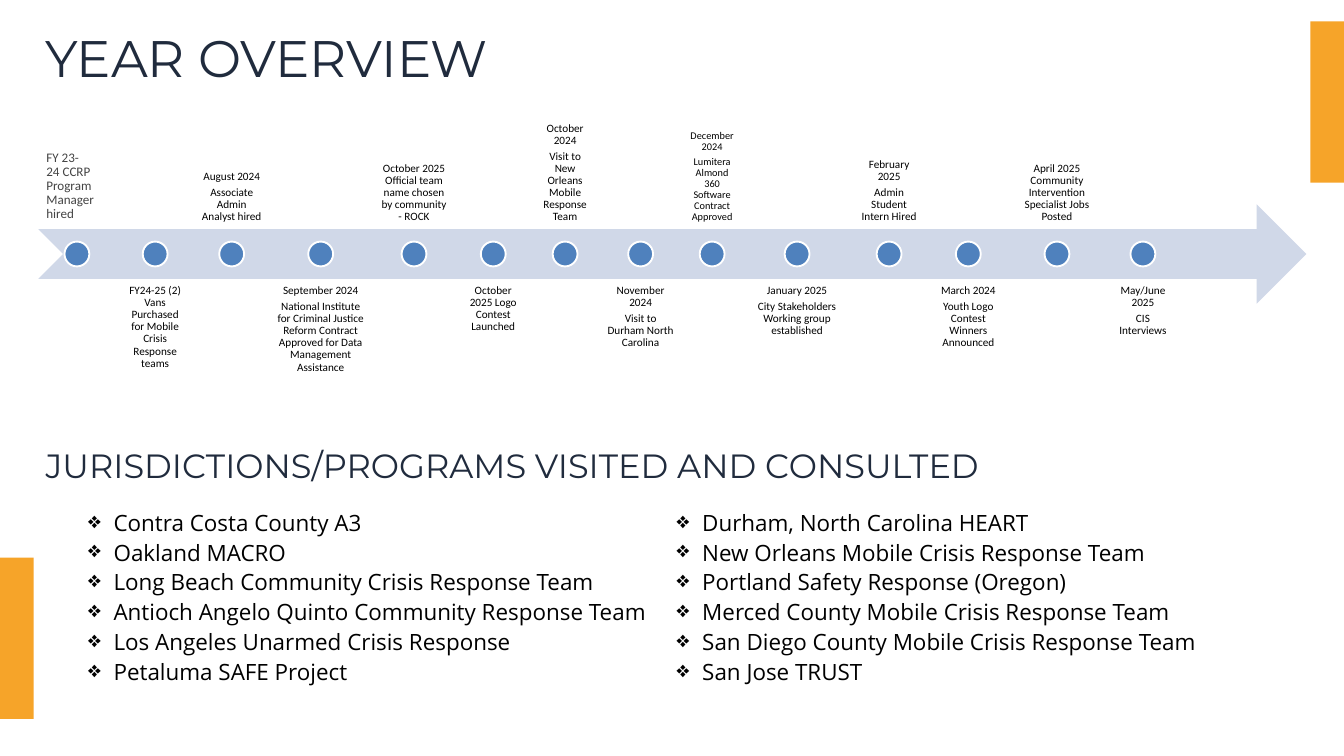
from lxml import etree
from pptx import Presentation
from pptx.dml.color import RGBColor
from pptx.enum import shapes, text
from pptx.oxml import ns
from pptx.util import Inches, Pt

COLORS = {
    "heading": "202B3D",
    "body": "000000",
    "first_event": "444444",
    "arrow": "D0D8E8",
    "dot": "4F81BD",
    "dot_edge": "FFFFFF",
    "accent": "F6A429",
}

EVENTS = [
    (1.13, ["FY 23-24\u00a0CCRP Program Manager hired"]),
    (1.11, ["FY24-25 (2) Vans Purchased for Mobile Crisis Response teams"]),
    (1.08, ["August 2024", "Associate Admin Analyst hired"]),
    (1.48, ["September 2024", "National Institute for Criminal Justice Reform "
            "Contract Approved for Data Management Assistance"]),
    (1.21, ["October 2025 Official team name chosen by community - ROCK"]),
    (1.06, ["October 2025 Logo Contest Launched"]),
    (0.99, ["October 2024", "Visit to New Orleans Mobile Response Team"]),
    (1.17, ["November 2024", "Visit to Durham North Carolina"]),
    (0.87, ["December 2024", "Lumitera Almond 360 Software Contract Approved"]),
    (1.57, ["January 2025", "City Stakeholders Working group established"]),
    (1.08, ["February 2025", "Admin Student Intern Hired"]),
    (1.19, ["March 2024", "Youth Logo Contest Winners Announced"]),
    (1.36, ["April 2025 Community Intervention Specialist Jobs Posted"]),
    (1.11, ["May/June 2025", "CIS Interviews"]),
]

PROGRAMS_LEFT = [
    "Contra Costa County A3",
    "Oakland MACRO",
    "Long Beach Community Crisis Response Team",
    "Antioch Angelo Quinto Community Response Team",
    "Los Angeles Unarmed Crisis Response",
    "Petaluma SAFE Project",
]
PROGRAMS_RIGHT = [
    "Durham, North Carolina HEART",
    "New Orleans Mobile Crisis Response Team",
    "Portland Safety Response (Oregon)",
    "Merced County Mobile Crisis Response Team",
    "San Diego County Mobile Crisis Response Team",
    "San Jose TRUST",
]


def rgb(name):
    return RGBColor.from_string(COLORS[name])


def add_block(slide, box, lines, font, size, color, spacing, after=0, inset=0,
              align=text.PP_ALIGN.LEFT, anchor=text.MSO_ANCHOR.TOP, grow=False):
    frame = slide.shapes.add_textbox(*map(Inches, box)).text_frame
    frame.word_wrap = True
    frame.auto_size = (text.MSO_AUTO_SIZE.SHAPE_TO_FIT_TEXT if grow
                       else text.MSO_AUTO_SIZE.NONE)
    frame.vertical_anchor = anchor
    frame.margin_left = frame.margin_right = Inches(inset)
    frame.margin_top = frame.margin_bottom = Inches(inset)
    for index, line in enumerate(lines):
        paragraph = frame.add_paragraph() if index else frame.paragraphs[0]
        paragraph.alignment = align
        paragraph.line_spacing = spacing
        paragraph.space_after = Pt(after)
        run = paragraph.add_run()
        run.text = line
        run.font.name = font
        run.font.size = Pt(size)
        run.font.color.rgb = rgb(color)
    return frame


def add_filled(slide, kind, box, color):
    shape = slide.shapes.add_shape(kind, *map(Inches, box))
    shape.shadow.inherit = False
    shape.fill.solid()
    shape.fill.fore_color.rgb = rgb(color)
    shape.line.fill.background()
    return shape


def add_heading(slide, box, title, size):
    add_block(slide, box, [title], "Montserrat", size, "heading", 1.01, grow=True)


def add_event(slide, box, lines, above, first):
    size = 14 if first else 11 if "December 2024" in lines else 12
    add_block(slide, box, lines, "Calibri", size,
              "first_event" if first else "body", 0.9,
              after=0.35 * size, inset=0.11 if first else 0.09,
              align=text.PP_ALIGN.LEFT if first else text.PP_ALIGN.CENTER,
              anchor=text.MSO_ANCHOR.BOTTOM if above else text.MSO_ANCHOR.TOP)


def add_timeline(slide, box):
    left, top, width, height = box
    row = 0.4 * height
    diameter = 0.1 * height
    add_filled(slide, shapes.MSO_SHAPE.NOTCHED_RIGHT_ARROW,
               (left, top + 0.3 * height, width, row), "arrow")
    used = sum(event_width for event_width, _ in EVENTS)
    gap = (0.9 * width - used) / (len(EVENTS) - 1)
    x = left + 0.01
    for index, (event_width, lines) in enumerate(EVENTS):
        above = index % 2 == 0
        event_top = top if above else top + 0.6 * height
        add_event(slide, (x, event_top, event_width, row), lines, above, index == 0)
        dot = add_filled(slide, shapes.MSO_SHAPE.OVAL,
                         (x + (event_width - diameter) / 2, top + 0.45 * height,
                          diameter, diameter), "dot")
        dot.line.color.rgb = rgb("dot_edge")
        dot.line.width = Pt(2)
        x += event_width + gap


def add_programs(slide, box, programs):
    frame = add_block(slide, box, programs, "Open Sans", 24, "body", 0.9,
                      after=6, grow=True)
    for paragraph in frame.paragraphs:
        paragraph.level = 3
        properties = paragraph._p.get_or_add_pPr()
        properties.set("marL", str(Inches(1.12)))
        properties.set("indent", str(Inches(-0.38)))
        bullet_color = etree.SubElement(properties, ns.qn("a:buClr"))
        etree.SubElement(bullet_color, ns.qn("a:srgbClr"), val=COLORS["body"])
        etree.SubElement(properties, ns.qn("a:buChar"), char="❖")


def add_side_bar(slide, left, top):
    add_filled(slide, shapes.MSO_SHAPE.RECTANGLE, (left, top, 0.5, 2.4), "accent")


def main():
    deck = Presentation()
    deck.slide_width = Inches(20)
    deck.slide_height = Inches(11.25)
    slide = deck.slides.add_slide(deck.slide_layouts[6])
    add_heading(slide, (0.67, 0.38, 8.67, 0.89), "YEAR OVERVIEW", 55)
    add_timeline(slide, (0.57, 1.93, 18.87, 3.7))
    add_heading(slide, (0.68, 6.62, 14.67, 0.58),
                "JURISDICTIONS/PROGRAMS VISITED AND CONSULTED", 36)
    add_programs(slide, (0.57, 7.62, 9.08, 2.6), PROGRAMS_LEFT)
    add_side_bar(slide, 0, 8.3)
    add_side_bar(slide, 19.5, 0.32)
    add_programs(slide, (9.33, 7.62, 9.08, 2.6), PROGRAMS_RIGHT)
    deck.save("out.pptx")


if __name__ == "__main__":
    main()
